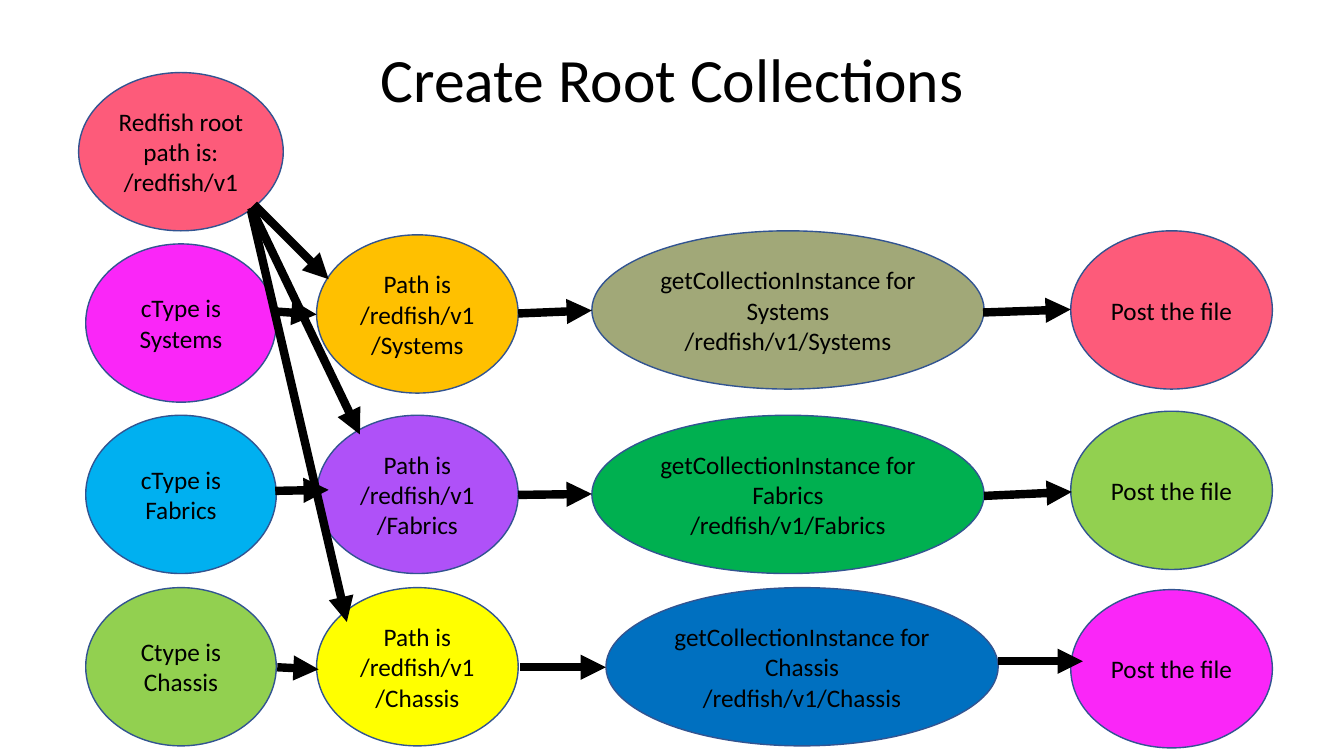
from dataclasses import dataclass

from lxml import etree
from pptx import Presentation
from pptx.dml.color import RGBColor
from pptx.enum.shapes import MSO_CONNECTOR, MSO_SHAPE
from pptx.enum.text import MSO_ANCHOR, PP_ALIGN
from pptx.oxml.ns import qn
from pptx.util import Inches, Pt

ELLIPSE = MSO_SHAPE.OVAL
STRAIGHT = MSO_CONNECTOR.STRAIGHT
MIDDLE = MSO_ANCHOR.MIDDLE
CENTER = PP_ALIGN.CENTER


@dataclass(frozen=True)
class Theme:
    font: str = "Calibri"
    title_size: int = 44
    body_size: int = 18
    outline_width: int = 1
    arrow_width: int = 6
    black: str = "000000"
    outline: str = "325491"
    rose: str = "FD5B7A"
    magenta: str = "FA26F8"
    sky: str = "00B0F0"
    lime: str = "92D050"
    amber: str = "FFC000"
    violet: str = "AF51F8"
    yellow: str = "FFFF00"
    olive: str = "A1A878"
    green: str = "00B050"
    blue: str = "0070C0"


@dataclass(frozen=True)
class Box:
    left: float
    top: float
    width: float
    height: float

    def inner_box(self, left, top, width, height):
        return Box(self.left + left, self.top + top, width, height)

    def lengths(self):
        return [Inches(value) for value in (self.left, self.top, self.width, self.height)]


@dataclass(frozen=True)
class Row:
    name: str
    type_label: str
    top: float
    colors: tuple
    shifts: tuple
    links: tuple


THEME = Theme()
NODE_HEIGHT = 1.57
ROW_LEFT, ROW_WIDTH = 0.85, 11.77
COLUMNS = ((0, 1.89), (2.29, 2), (5.02, 3.89), (9.77, 2))

ROWS = (
    Row("Systems", "cType", 2.29,
        (THEME.magenta, THEME.amber, THEME.olive, THEME.rose),
        ((0, 0.13), (0, 0.04), (0, 0), (0, 0)),
        ((1.88, 0.8, 2.29, 0.83), (4.29, 0.82, 5.02, 0.79), (8.9, 0.81, 9.77, 0.78))),
    Row("Fabrics", "cType", 4.12,
        (THEME.sky, THEME.violet, THEME.green, THEME.lime),
        ((0, 0), (0, 0), (0, 0), (0, -0.04)),
        ((1.88, 0.75, 2.41, 0.74), (4.29, 0.79, 5.02, 0.78), (8.91, 0.8, 9.78, 0.76))),
    Row("Chassis", "Ctype", 5.83,
        (THEME.lime, THEME.yellow, THEME.blue, THEME.magenta),
        ((0, 0), (0, 0), (0.14, 0), (0, 0.02)),
        ((1.9, 0.79, 2.31, 0.81), (4.31, 0.79, 5.16, 0.79), (9.05, 0.73, 9.89, 0.73))),
)
ROOT_LINKS = (
    (1.74, 1.31, 2.48, 2.05),
    (1.71, 1.34, 2.79, 3.59),
    (1.71, 1.37, 2.66, 5.45),
)


def write_text(shape, lines, *, size=THEME.body_size, color=THEME.black, spacing=None):
    frame = shape.text_frame
    frame.word_wrap = True
    frame.vertical_anchor = MIDDLE
    for index, line in enumerate(lines):
        paragraph = frame.add_paragraph() if index else frame.paragraphs[0]
        paragraph.alignment = CENTER
        paragraph.line_spacing = spacing
        run = paragraph.add_run()
        run.text = line
        run.font.name = THEME.font
        run.font.size = Pt(size)
        run.font.color.rgb = RGBColor.from_string(color)


def add_title(slide, box, title):
    shape = slide.shapes.add_textbox(*box.lengths())
    write_text(shape, [title], size=THEME.title_size, spacing=0.9)


def add_node(slide, box, lines, color):
    shape = slide.shapes.add_shape(ELLIPSE, *box.lengths())
    shape.shadow.inherit = False
    shape.fill.solid()
    shape.fill.fore_color.rgb = RGBColor.from_string(color)
    shape.line.color.rgb = RGBColor.from_string(THEME.outline)
    shape.line.width = Pt(THEME.outline_width)
    write_text(shape, lines)


def add_arrow(slide, box, link):
    start_x, start_y, end_x, end_y = link
    arrow = slide.shapes.add_connector(
        STRAIGHT,
        Inches(box.left + start_x), Inches(box.top + start_y),
        Inches(box.left + end_x), Inches(box.top + end_y),
    )
    arrow.line.color.rgb = RGBColor.from_string(THEME.black)
    arrow.line.width = Pt(THEME.arrow_width)
    properties = arrow.element.spPr
    etree.SubElement(properties.find(qn("a:ln")), qn("a:tailEnd"), type="triangle")
    etree.SubElement(properties, qn("a:effectLst"))


def add_row(slide, box, row):
    labels = (
        [f"{row.type_label} is {row.name}"],
        [f"Path is /redfish/v1/{row.name}"],
        ["getCollectionInstance for", row.name, f"/redfish/v1/{row.name}"],
        ["Post the file"],
    )
    for (left, width), (right, down), lines, color in zip(COLUMNS, row.shifts, labels, row.colors):
        add_node(slide, box.inner_box(left + right, down, width, box.height), lines, color)
    for link in row.links:
        add_arrow(slide, box, link)


def add_root(slide, box):
    add_node(slide, box, ["Redfish root path is: /redfish/v1"], THEME.rose)
    for link in ROOT_LINKS:
        add_arrow(slide, box, link)


def main():
    presentation = Presentation()
    presentation.slide_width = Inches(13.33)
    presentation.slide_height = Inches(7.5)
    slide = presentation.slides.add_slide(presentation.slide_layouts[6])
    add_title(slide, Box(0.92, 0.4, 11.5, 0.83), "Create Root Collections")
    for row in ROWS:
        add_row(slide, Box(ROW_LEFT, row.top, ROW_WIDTH, NODE_HEIGHT), row)
    add_root(slide, Box(0.78, 0.72, 2.03, NODE_HEIGHT))
    presentation.save("out.pptx")


if __name__ == "__main__":
    main()
